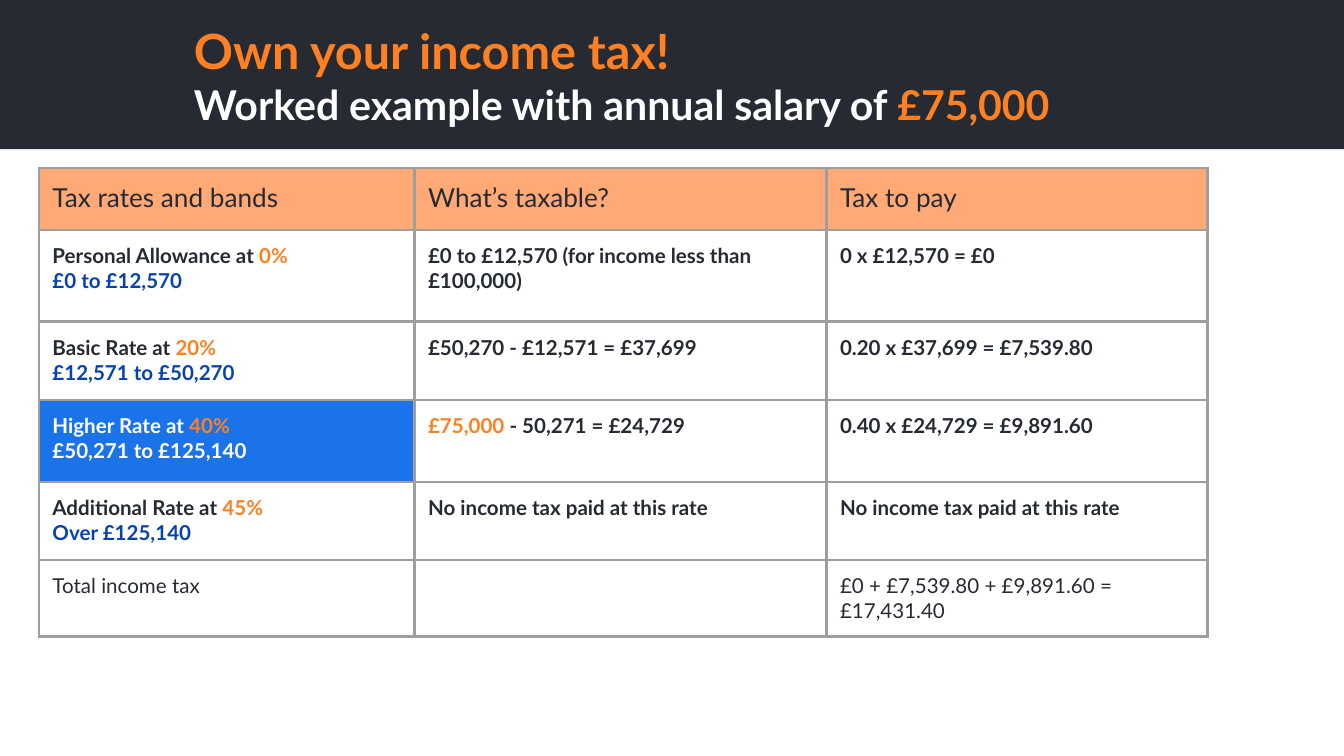
"""Build a slide with a worked income tax example in a banded table."""
from lxml import etree
from pptx import Presentation
from pptx.dml.color import RGBColor
from pptx.enum.shapes import MSO_SHAPE
from pptx.enum.text import MSO_ANCHOR
from pptx.oxml.ns import qn
from pptx.util import Inches, Pt

RECTANGLE = MSO_SHAPE.RECTANGLE
MIDDLE = MSO_ANCHOR.MIDDLE
FONT = "Lato"
INSET = Inches(0.1)
COLORS = {
    "dark": "262A33", "orange": "FF8022", "white": "FFFFFF", "navy": "0543B3",
    "blue": "1A73E8", "peach": "FFA976", "border": "9E9E9E",
}

presentation = Presentation()
presentation.slide_width = Inches(10)
presentation.slide_height = presentation.slide_width * 9 // 16
slide = presentation.slides.add_slide(presentation.slide_layouts[6])
column_unit = presentation.slide_width / 100
row_unit = presentation.slide_height / 100


def write_lines(text_frame, lines, sizes, bold):
    text_frame.word_wrap = True
    for index, (line, size) in enumerate(zip(lines, sizes)):
        paragraph = text_frame.paragraphs[0] if index == 0 else text_frame.add_paragraph()
        paragraph.font.name = FONT
        paragraph.font.size = Pt(size)
        paragraph.font.bold = bold
        for text, color in line:
            run = paragraph.add_run()
            run.text = text
            run.font.color.rgb = RGBColor.from_string(COLORS[color])


def style_cell(cell, fill):
    cell.margin_left = cell.margin_right = cell.margin_top = cell.margin_bottom = INSET
    properties = cell._tc.get_or_add_tcPr()
    for side in ("a:lnL", "a:lnR", "a:lnT", "a:lnB"):
        border = etree.SubElement(properties, qn(side), w=str(Pt(1.5)))
        solid = etree.SubElement(border, qn("a:solidFill"))
        etree.SubElement(solid, qn("a:srgbClr"), val=COLORS["border"])
    if fill:
        cell.fill.solid()
        cell.fill.fore_color.rgb = RGBColor.from_string(COLORS[fill])
    else:
        cell.fill.background()


banner = slide.shapes.add_shape(RECTANGLE, 0, 0, presentation.slide_width, int(19.73 * row_unit))
banner.shadow.inherit = False
banner.fill.solid()
banner.fill.fore_color.rgb = RGBColor.from_string(COLORS["dark"])
banner.line.fill.background()

title = slide.shapes.add_textbox(
    int(13.45 * column_unit), int(4.9 * row_unit), int(69 * column_unit), int(10 * row_unit))
title_frame = title.text_frame
title_frame.vertical_anchor = MIDDLE
title_frame.margin_left = title_frame.margin_right = INSET
title_frame.margin_top = title_frame.margin_bottom = INSET
write_lines(title_frame, [
    [("Own your income tax!", "orange")],
    [("Worked example with annual salary of ", "white"), ("£75,000", "orange")],
], (26, 22), True)

bands = [
    ("Personal Allowance", "0%", "£0 to £12,570",
     [("£0 to £12,570 (for income less than £100,000)", "dark")], "0 x £12,570 = £0"),
    ("Basic Rate", "20%", "£12,571 to £50,270",
     [("£50,270 - £12,571 = £37,699", "dark")], "0.20 x £37,699 = £7,539.80"),
    ("Higher Rate", "40%", "£50,271 to £125,140",
     [("£75,000", "orange"), (" - 50,271 = £24,729", "dark")], "0.40 x £24,729 = £9,891.60"),
    ("Additional Rate", "45%", "Over £125,140",
     [("No income tax paid at this rate", "dark")], "No income tax paid at this rate"),
]
highlighted = "Higher Rate"
header_rows = [[[[(text, "dark")]] for text in ("Tax rates and bands", "What’s taxable?", "Tax to pay")]]
body_rows = []
for name, rate, band, taxable, payment in bands:
    name_color, band_color = ("white", "white") if name == highlighted else ("dark", "navy")
    body_rows.append([
        [[(f"{name} at ", name_color), (rate, "orange")], [(band, band_color)]],
        [taxable],
        [[(payment, "dark")]],
    ])
body_rows.append([
    [[("Total income tax", "dark")]], [[]], [[("£0 + £7,539.80 + £9,891.60 = £17,431.40", "dark")]],
])

column_widths = (27.95, 30.65, 28.35)
header_top, header_height = 22.22, 8.2
tables = [
    (header_top + header_height, (12.1, 10.37, 10.85, 10.37, 8.9), body_rows, 11),
    (header_top, (header_height,), header_rows, 14),
]
for top, heights, rows, size in tables:
    table = slide.shapes.add_table(
        len(rows), len(column_widths), int(2.9 * column_unit), int(top * row_unit),
        int(sum(column_widths) * column_unit), int(sum(heights) * row_unit)).table
    for column, width in zip(table.columns, column_widths):
        column.width = int(width * column_unit)
    for row_index, (height, row) in enumerate(zip(heights, rows)):
        table.rows[row_index].height = int(height * row_unit)
        is_header = rows is header_rows
        bold = not is_header and row_index < len(bands)
        for column_index, lines in enumerate(row):
            cell = table.cell(row_index, column_index)
            is_highlight = bold and column_index == 0 and bands[row_index][0] == highlighted
            style_cell(cell, "peach" if is_header else "blue" if is_highlight else None)
            write_lines(cell.text_frame, lines, [size] * len(lines), bold)

presentation.save("out.pptx")
